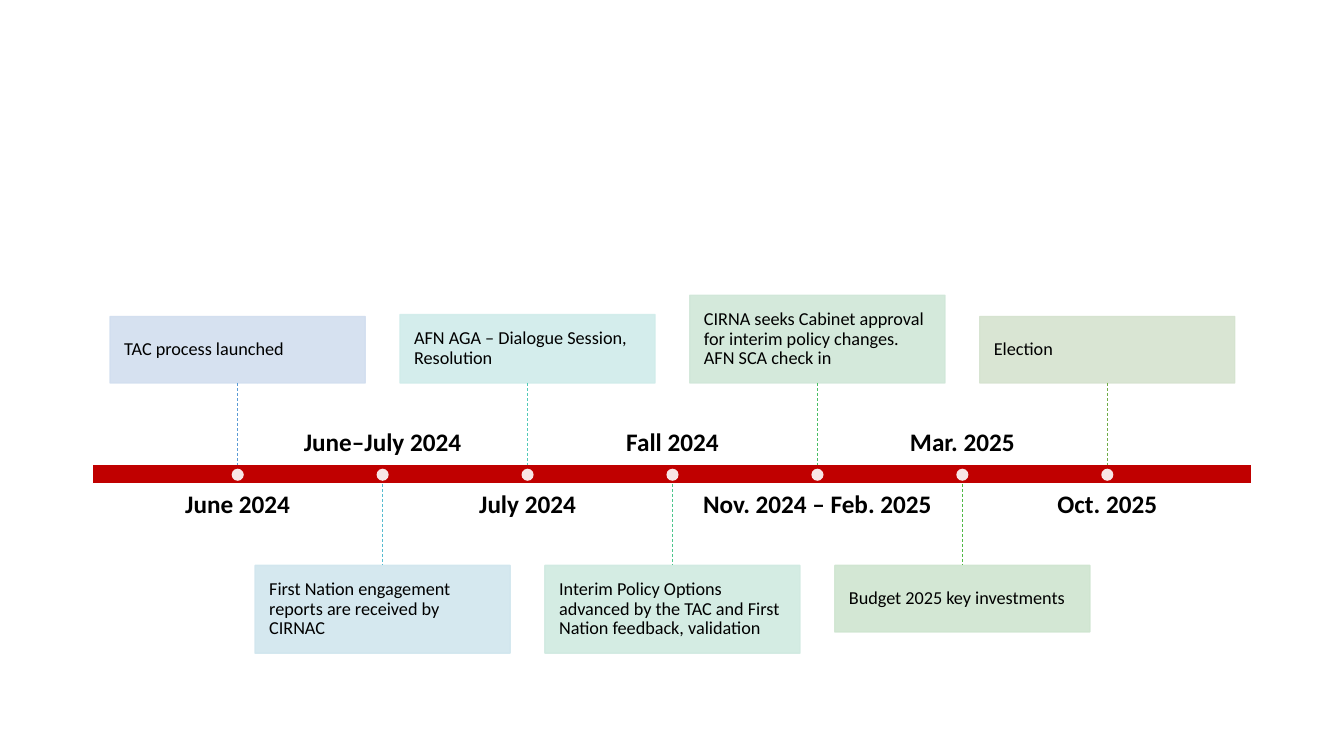
from pptx import Presentation
from pptx.dml.color import RGBColor
from pptx.enum.dml import MSO_LINE
from pptx.enum.shapes import MSO_CONNECTOR, MSO_SHAPE
from pptx.enum.text import MSO_ANCHOR, PP_ALIGN
from pptx.oxml.ns import qn
from pptx.util import Inches, Pt
from lxml import etree

BLACK = RGBColor(0x00, 0x00, 0x00)
WHITE = RGBColor(0xFF, 0xFF, 0xFF)
RED = RGBColor(0xC0, 0x00, 0x00)

BAR_X, BAR_Y, BAR_W, BAR_H = 0.92, 4.61, 11.5, 0.19
BAR_END = BAR_Y + BAR_H
STEM = 0.81
BOX_W, DATE_W, DATE_H, DOT = 2.53, 2.3, 0.54, 0.12

# date, event, box height, box colour, stem colour
MILESTONES = [
    ("June 2024", "TAC process launched", 0.66,
     RGBColor(0xD2, 0xDE, 0xEF), RGBColor(0x5B, 0x9B, 0xD5)),
    ("June–July 2024", "First Nation engagement reports are received by CIRNAC", 0.87,
     RGBColor(0xD1, 0xE6, 0xEE), RGBColor(0x56, 0xBC, 0xD0)),
    ("July 2024", "AFN AGA – Dialogue Session, Resolution", 0.68,
     RGBColor(0xD0, 0xEC, 0xEA), RGBColor(0x52, 0xCA, 0xB8)),
    ("Fall 2024", "Interim Policy Options advanced by the TAC and First Nation "
     "feedback, validation", 0.87,
     RGBColor(0xD0, 0xEA, 0xE1), RGBColor(0x4D, 0xC5, 0x8D)),
    ("Nov. 2024 – Feb. 2025", "CIRNA seeks Cabinet approval for interim policy changes. "
     "AFN SCA check in", 0.87,
     RGBColor(0xD0, 0xE7, 0xD8), RGBColor(0x49, 0xBF, 0x64)),
    ("Mar. 2025", "Budget 2025 key investments", 0.66,
     RGBColor(0xCF, 0xE5, 0xD0), RGBColor(0x50, 0xB8, 0x46)),
    ("Oct. 2025", "Election", 0.66,
     RGBColor(0xD5, 0xE3, 0xCF), RGBColor(0x70, 0xAD, 0x47)),
]


def add_filled(kind, x, y, w, h, color, line=None, alpha=None):
    """Add a shape without shadow; alpha is the opacity in percent."""
    sp = slide.shapes.add_shape(kind, Inches(x), Inches(y), Inches(w), Inches(h))
    sp.shadow.inherit = False
    sp.fill.solid()
    sp.fill.fore_color.rgb = color
    if line is None:
        sp.line.fill.background()
    else:
        sp.line.color.rgb = line
        sp.line.width = Pt(1)
    if alpha:
        for clr in sp._element.spPr.iter(qn("a:srgbClr")):
            etree.SubElement(clr, qn("a:alpha")).set("val", str(alpha * 1000))
    return sp


def write(sp, text, margin, anchor, align, font):
    tf = sp.text_frame
    tf.word_wrap = True
    tf.vertical_anchor = anchor
    for side in ("left", "top", "right", "bottom"):
        setattr(tf, f"margin_{side}", Inches(margin))
    p = tf.paragraphs[0]
    p.alignment = align
    p.line_spacing = 0.9
    r = p.add_run()
    r.text = text
    r.font.color.rgb = BLACK
    for name, value in font.items():
        setattr(r.font, name, value)


prs = Presentation()
prs.slide_width, prs.slide_height = Inches(13.33), Inches(7.5)
slide = prs.slides.add_slide(prs.slide_layouts[6])

add_filled(MSO_SHAPE.RECTANGLE, BAR_X, BAR_Y, BAR_W, BAR_H, RED, WHITE)

step = BAR_W / (len(MILESTONES) + 1)
for i, (date, event, box_h, box_color, stem_color) in enumerate(MILESTONES):
    x = BAR_X + step * (i + 1)
    if i % 2 == 0:  # event above the bar, date below
        stem_y, box_y = BAR_Y - STEM, BAR_Y - STEM - box_h
        date_y, date_anchor = BAR_END + 0.08, MSO_ANCHOR.TOP
    else:
        stem_y, box_y = BAR_END, BAR_END + STEM
        date_y, date_anchor = BAR_Y - 0.08 - DATE_H, MSO_ANCHOR.BOTTOM

    label = slide.shapes.add_textbox(Inches(x - DATE_W / 2), Inches(date_y),
                                     Inches(DATE_W), Inches(DATE_H))
    write(label, date, 0, date_anchor, PP_ALIGN.CENTER,
          {"name": "Calibri", "size": Pt(18), "bold": True})

    box = add_filled(MSO_SHAPE.RECTANGLE, x - BOX_W / 2, box_y, BOX_W, box_h,
                     box_color, box_color, 90)
    write(box, event, 0.14, MSO_ANCHOR.MIDDLE, PP_ALIGN.LEFT,
          {"name": "Calibri", "size": Pt(13)})

    stem = slide.shapes.add_connector(MSO_CONNECTOR.STRAIGHT, Inches(x), Inches(stem_y),
                                      Inches(x), Inches(stem_y + STEM))
    stem.line.color.rgb = stem_color
    stem.line.width = Pt(0.5)
    stem.line.dash_style = MSO_LINE.DASH
    etree.SubElement(stem._element.spPr, qn("a:effectLst"))

    add_filled(MSO_SHAPE.OVAL, x - DOT / 2, BAR_Y + 0.04, DOT, DOT, WHITE, alpha=90)

prs.save("out.pptx")
